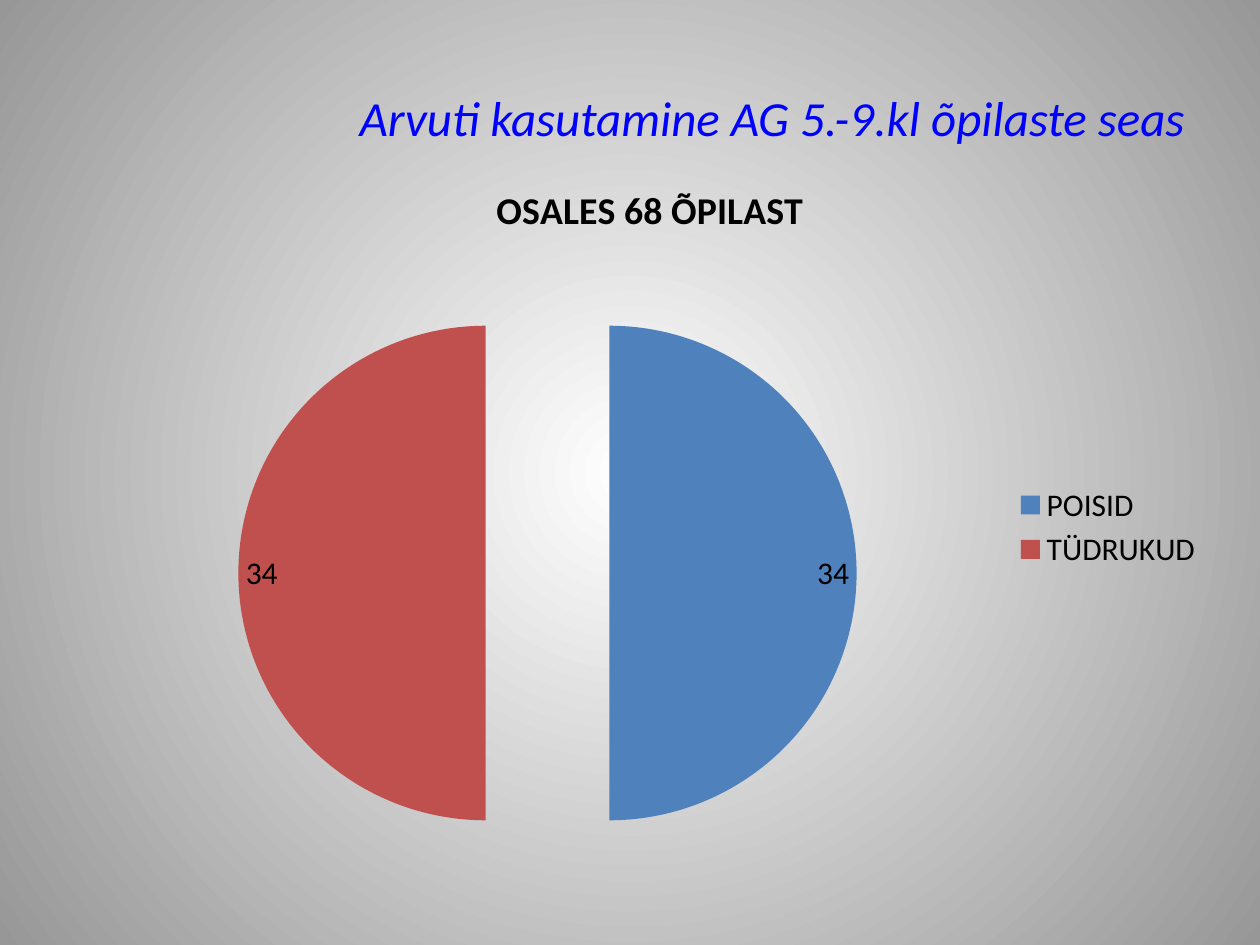
import pptx
import pptx.chart.data
import pptx.dml.color
import pptx.enum.chart
import pptx.enum.text
import pptx.oxml
import pptx.oxml.ns
import pptx.util

Pt = pptx.util.Pt
enum = pptx.enum

# Content
HEAD = "Arvuti kasutamine AG 5.-9.kl õpilaste seas"
NAME = "OSALES 68 ÕPILAST"
DATA = {"POISID": 34, "TÜDRUKUD": 34}

# Boxes in points: left, top, width, height
PAGE = (720, 540)
HEAD_BOX = (36, 21.6, 648, 90)
PIE_BOX = (48.24, 88.56, 646.56, 425.52)
BURST = 25

THEME = {
    "font": "Calibri",
    "head": "0000FF", "text": "000000",
    "slices": ("4F81BD", "C0504D"),
    "back": ("FFFFFF", "979797"),
    "head_size": 28, "name_size": 21.6, "text_size": 18,
}


def rgb(code):
    return pptx.dml.color.RGBColor.from_string(code)


def style(font, size, color, bold=False, italic=False):
    font.name = THEME["font"]
    font.size = Pt(size)
    font.bold, font.italic = bold, italic
    font.color.rgb = rgb(color)


def write(frame, text, align=None, **form):
    para = frame.paragraphs[0]
    para.alignment = align
    run = para.add_run()
    run.text = text
    style(run.font, **form)


def node(xml):
    return pptx.oxml.parse_xml(xml)


def paint(slide):
    """Fill the background with a gradient that spreads from the centre."""
    fill = slide.background.fill
    fill.gradient()
    for stop, code, place in zip(fill.gradient_stops, THEME["back"], (0, 1)):
        stop.color.rgb = rgb(code)
        stop.position = place
    line = slide.element.find(".//" + pptx.oxml.ns.qn("a:lin"))
    line.getparent().replace(line, node(
        f'<a:path {pptx.oxml.ns.nsdecls("a")} path="circle">'
        '<a:fillToRect l="50000" t="50000" r="50000" b="50000"/></a:path>'))


def add_pie(slide):
    data = pptx.chart.data.CategoryChartData()
    data.categories = list(DATA)
    data.add_series(NAME, list(DATA.values()))
    chart = slide.shapes.add_chart(
        enum.chart.XL_CHART_TYPE.PIE, *map(Pt, PIE_BOX), data).chart
    style(chart.font, THEME["text_size"], THEME["text"])

    # Title and legend
    chart.has_title = True
    write(chart.chart_title.text_frame, NAME, size=THEME["name_size"],
          color=THEME["text"], bold=True)
    chart.chart_title.include_in_layout = False
    chart.has_legend = True
    chart.legend.position = enum.chart.XL_LEGEND_POSITION.RIGHT
    chart.legend.include_in_layout = False

    # Slices, pulled apart
    plot = chart.plots[0]
    plot.vary_by_categories = True
    pie = plot.series[0]
    pie._element.find(pptx.oxml.ns.qn("c:tx")).addnext(node(
        f'<c:explosion {pptx.oxml.ns.nsdecls("c")} val="{BURST}"/>'))
    for i, code in enumerate(THEME["slices"]):
        fill = pie.points[i].format.fill
        fill.solid()
        fill.fore_color.rgb = rgb(code)

    # Values
    labels = pie.data_labels
    labels.show_value = True
    labels.show_percentage = False
    labels.position = enum.chart.XL_LABEL_POSITION.INSIDE_END
    style(labels.font, THEME["text_size"], THEME["text"])


def main():
    deck = pptx.Presentation()
    deck.slide_width, deck.slide_height = map(Pt, PAGE)
    slide = deck.slides.add_slide(deck.slide_layouts[5])
    paint(slide)

    # Heading
    head = slide.shapes.title
    head.left, head.top, head.width, head.height = map(Pt, HEAD_BOX)
    head.text_frame.vertical_anchor = enum.text.MSO_ANCHOR.MIDDLE
    write(head.text_frame, HEAD, align=enum.text.PP_ALIGN.RIGHT,
          size=THEME["head_size"], color=THEME["head"], italic=True)

    add_pie(slide)
    deck.save("out.pptx")


if __name__ == "__main__":
    main()
